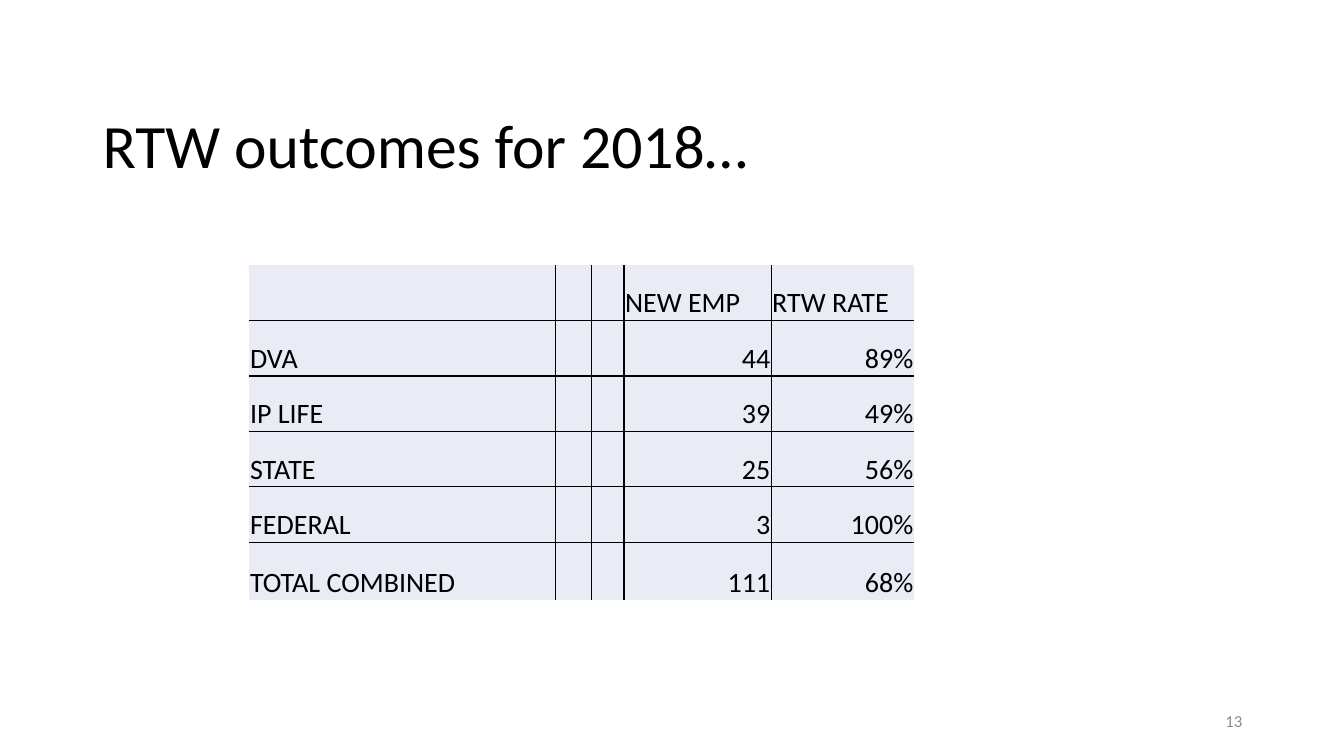
from dataclasses import dataclass

from lxml.etree import SubElement
from pptx import Presentation
from pptx.dml.color import RGBColor
from pptx.enum.text import MSO_ANCHOR, PP_ALIGN
from pptx.oxml.ns import qn
from pptx.util import Emu, Pt

EMU_PER_PX = 9144
BLACK = "000000"
GREY = "8C8C8C"
CELL_FILL = "E9EBF5"


@dataclass(frozen=True)
class Label:
    text: str
    left: int
    top: int
    width: int
    height: int
    size: int
    color: str
    anchor: MSO_ANCHOR
    align: PP_ALIGN
    spacing: float


LABELS = [
    Label("RTW outcomes for 2018…", 92, 40, 1150, 145, 44, BLACK,
          MSO_ANCHOR.BOTTOM, PP_ALIGN.LEFT, 0.9),
    Label("13", 942, 695, 300, 40, 12, GREY,
          MSO_ANCHOR.MIDDLE, PP_ALIGN.RIGHT, 1.0),
]

COLUMN_WIDTHS = [304, 36, 32, 146, 142]
ROW_HEIGHTS = [55, 55, 55, 55, 55, 57]
OUTCOMES = [
    ["", "", "", "NEW EMP", "RTW RATE"],
    ["DVA", "", "", "44", "89%"],
    ["IP LIFE", "", "", "39", "49%"],
    ["STATE", "", "", "25", "56%"],
    ["FEDERAL", "", "", "3", "100%"],
    ["TOTAL COMBINED", "", "", "111", "68%"],
]


def px(n: int) -> Emu:
    return Emu(n * EMU_PER_PX)


def rgb(color: str) -> RGBColor:
    return RGBColor.from_string(color)


def style_paragraph(p, size: int, color: str, align: PP_ALIGN) -> None:
    p.alignment = align
    p.font.name = "Calibri"
    p.font.size = Pt(size)
    p.font.bold = False
    p.font.color.rgb = rgb(color)


def add_label(s, label: Label) -> None:
    sp = s.shapes.add_textbox(px(label.left), px(label.top),
                              px(label.width), px(label.height))
    tf = sp.text_frame
    tf.word_wrap = True
    tf.vertical_anchor = label.anchor
    p = tf.paragraphs[0]
    p.text = label.text
    p.line_spacing = label.spacing
    style_paragraph(p, label.size, label.color, label.align)


def add_borders(cell, inner_sides: dict[str, bool]) -> None:
    tc_pr = cell._tc.get_or_add_tcPr()
    for side, inner in inner_sides.items():
        ln = SubElement(tc_pr, qn(f"a:ln{side}"), w=str(Pt(1)))
        if inner:
            fill = SubElement(ln, qn("a:solidFill"))
            SubElement(fill, qn("a:srgbClr"), val=BLACK)
        else:
            SubElement(ln, qn("a:noFill"))


def add_outcomes_table(s) -> None:
    last_row, last_col = len(ROW_HEIGHTS) - 1, len(COLUMN_WIDTHS) - 1
    table = s.shapes.add_table(
        len(ROW_HEIGHTS), len(COLUMN_WIDTHS), px(247), px(263),
        px(sum(COLUMN_WIDTHS)), px(sum(ROW_HEIGHTS))).table
    table.first_row = False
    table.horz_banding = False
    for column, width in zip(table.columns, COLUMN_WIDTHS):
        column.width = px(width)
    for row, height in zip(table.rows, ROW_HEIGHTS):
        row.height = px(height)
    for i, values in enumerate(OUTCOMES):
        for j, value in enumerate(values):
            cell = table.cell(i, j)
            cell.margin_left = cell.margin_right = cell.margin_top = px(1)
            cell.margin_bottom = 0
            cell.vertical_anchor = MSO_ANCHOR.BOTTOM
            add_borders(cell, {"L": j > 0, "R": j < last_col,
                               "T": i > 0, "B": i < last_row})
            cell.fill.solid()
            cell.fill.fore_color.rgb = rgb(CELL_FILL)
            p = cell.text_frame.paragraphs[0]
            p.text = value
            numeric = i > 0 and j > 0
            style_paragraph(p, 20, BLACK,
                            PP_ALIGN.RIGHT if numeric else PP_ALIGN.LEFT)


def main() -> None:
    prs = Presentation()
    prs.slide_width, prs.slide_height = px(1333), px(750)
    s = prs.slides.add_slide(prs.slide_layouts[6])
    for label in LABELS:
        add_label(s, label)
    add_outcomes_table(s)
    prs.save("out.pptx")


if __name__ == "__main__":
    main()
